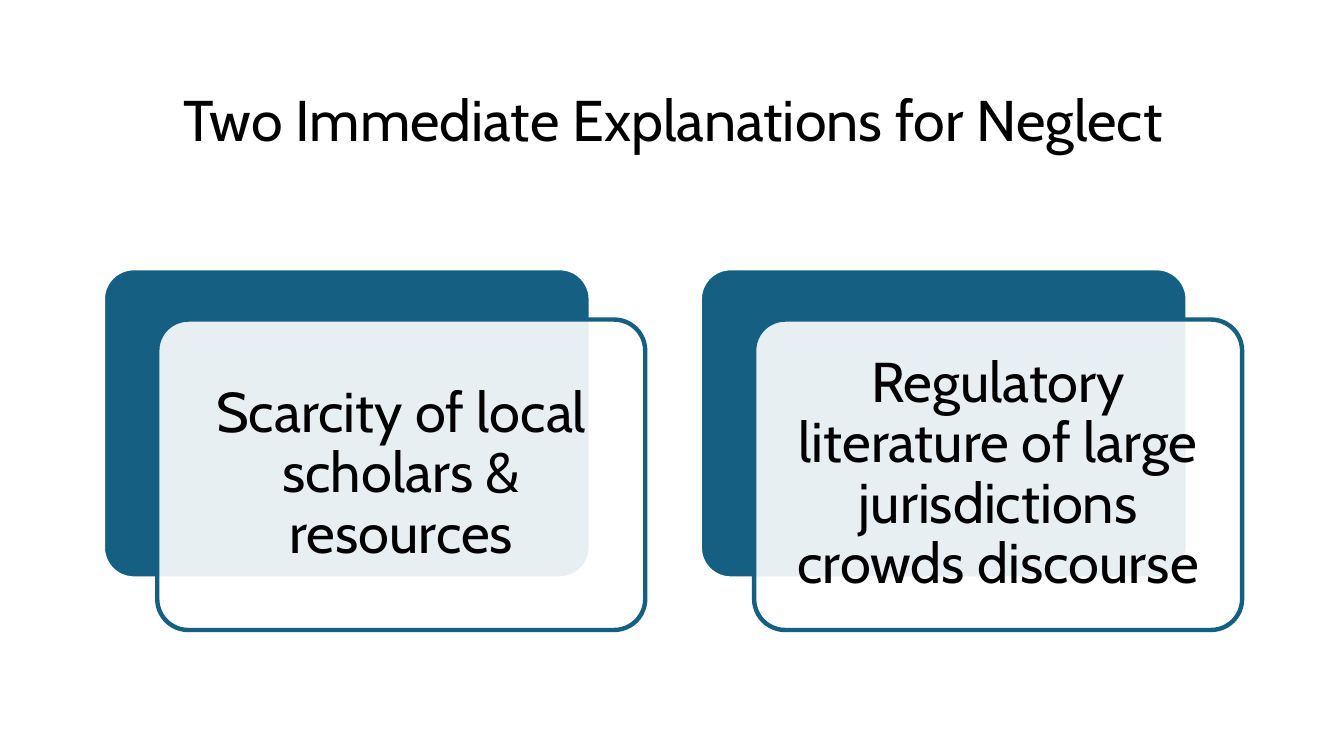
import pptx
import pptx.util
import pptx.dml.color
import pptx.enum.shapes
import pptx.enum.text
import pptx.oxml
import pptx.oxml.ns

# Content
TITLE = "Two Immediate Explanations for Neglect"
EXPLANATIONS = [
    "Scarcity of local scholars & resources",
    "Regulatory literature of large jurisdictions crowds discourse",
]

# Style and grid, in inches
FONT, BLACK, WHITE, TEAL = "Cabin", "000000", "FFFFFF", "156082"
LEFT, TOP = 1.02, 2.66
CARD_WIDTH, CARD_HEIGHT = 4.84, 3.08
COLUMN_STEP = 5.92
OFFSET_X, OFFSET_Y = 0.54, 0.51
INSET = 0.17
inches = pptx.util.Inches


def color(value):
    return pptx.dml.color.RGBColor.from_string(value)


def write(frame, text, size, inset):
    """Fill a text frame with one centred paragraph."""
    frame.word_wrap = True
    frame.auto_size = pptx.enum.text.MSO_AUTO_SIZE.NONE
    frame.vertical_anchor = pptx.enum.text.MSO_ANCHOR.MIDDLE
    frame.margin_left = frame.margin_right = inches(inset)
    frame.margin_top = frame.margin_bottom = inches(inset)
    para = frame.paragraphs[0]
    para.alignment = pptx.enum.text.PP_ALIGN.CENTER
    para.line_spacing = 0.9
    span = para.add_run()
    span.text = text
    span.font.name = FONT
    span.font.size = pptx.util.Pt(size)
    span.font.color.rgb = color(BLACK)


def add_card(group, left, top, fill, line, opacity=100):
    """Add a rounded rectangle to the group."""
    card = group.shapes.add_shape(
        pptx.enum.shapes.MSO_SHAPE.ROUNDED_RECTANGLE,
        inches(left), inches(top), inches(CARD_WIDTH), inches(CARD_HEIGHT))
    card.adjustments[0] = 0.1
    card.shadow.inherit = False
    card.fill.solid()
    card.fill.fore_color.rgb = color(fill)
    card.line.color.rgb = color(line)
    card.line.width = pptx.util.Pt(3.15)
    if opacity < 100:
        fill_color = card.fill._xPr.find(".//" + pptx.oxml.ns.qn("a:srgbClr"))
        alpha = pptx.oxml.parse_xml(
            f'<a:alpha {pptx.oxml.ns.nsdecls("a")} val="{opacity * 1000}"/>')
        fill_color.append(alpha)
    return card


def main():
    deck = pptx.Presentation()
    deck.slide_width, deck.slide_height = inches(13.33), inches(7.5)
    page = deck.slides.add_slide(deck.slide_layouts[5])
    page.background.fill.solid()
    page.background.fill.fore_color.rgb = color(WHITE)

    # Title
    title = page.shapes.title
    title.left, title.top = inches(1.67), inches(0.6)
    title.width, title.height = inches(10.02), inches(1.24)
    write(title.text_frame, TITLE, size=41, inset=0.05)

    # One pair of overlapping cards per explanation
    group = page.shapes.add_group_shape()
    for column, text in enumerate(EXPLANATIONS):
        left = LEFT + column * COLUMN_STEP
        add_card(group, left, TOP, fill=TEAL, line=WHITE)
        front = add_card(group, left + OFFSET_X, TOP + OFFSET_Y,
                         fill=WHITE, line=TEAL, opacity=90)
        write(front.text_frame, text, size=40, inset=INSET)

    deck.save("out.pptx")


if __name__ == "__main__":
    main()
